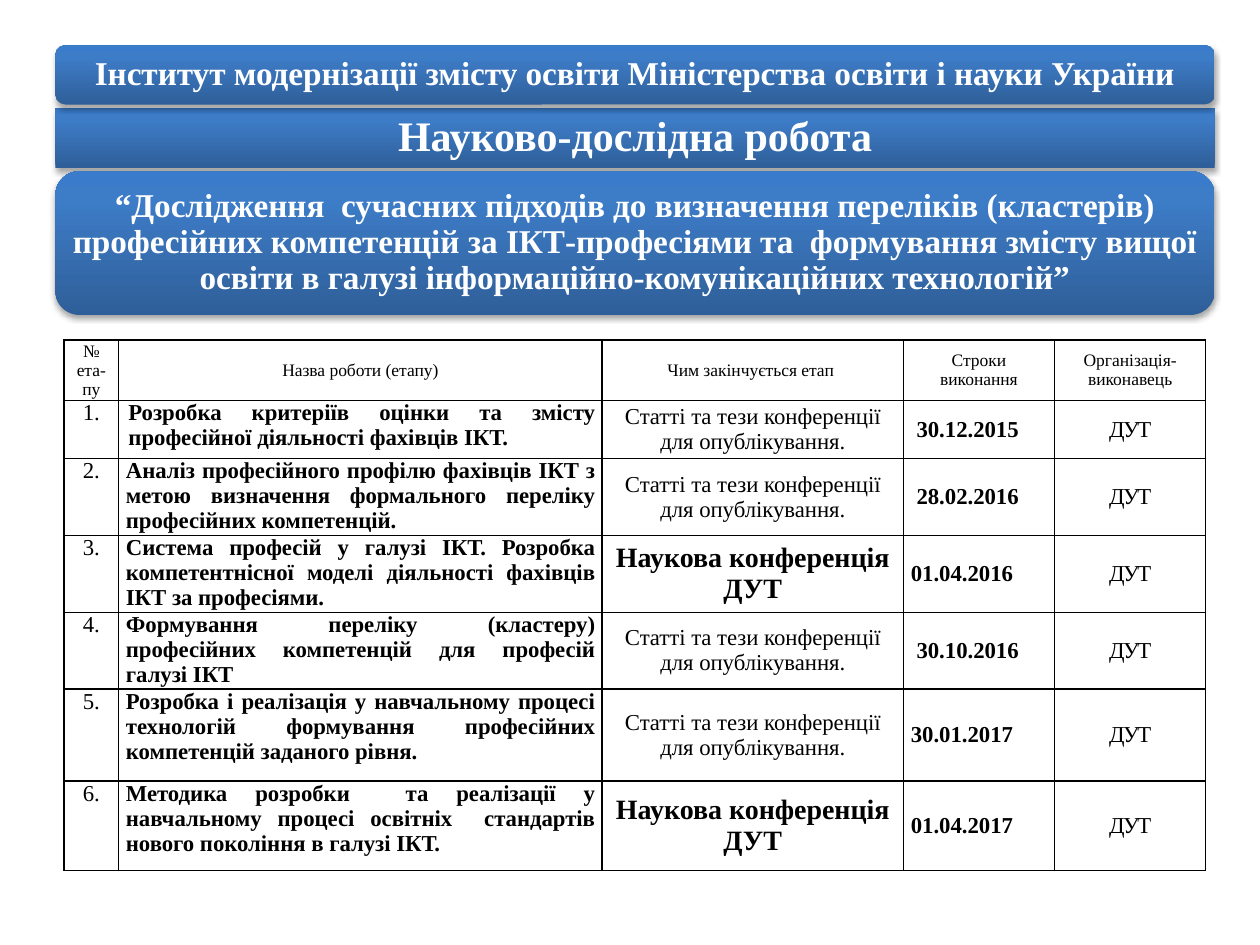
from lxml import etree
from pptx import Presentation
from pptx.dml.color import RGBColor
from pptx.enum.shapes import MSO_SHAPE
from pptx.enum.text import MSO_ANCHOR, MSO_AUTO_SIZE, PP_ALIGN
from pptx.util import Inches, Pt

ROUND = MSO_SHAPE.ROUNDED_RECTANGLE
MIDDLE, TOP = MSO_ANCHOR.MIDDLE, MSO_ANCHOR.TOP
LEFT, CENTER, JUSTIFY = PP_ALIGN.LEFT, PP_ALIGN.CENTER, PP_ALIGN.JUSTIFY
NS = "http://schemas.openxmlformats.org/drawingml/2006/main"
FONT = "Times New Roman"

BANNERS = [
    ("Інститут модернізації змісту освіти Міністерства освіти і науки України", 19, 0.47),
    ("Науково-дослідна робота", 24, 0.47),
    ("“Дослідження  сучасних підходів до визначення переліків (кластерів) "
     "професійних компетенцій за ІКТ-професіями та  формування змісту вищої "
     "освіти в галузі інформаційно-комунікаційних технологій”", 19, 1.14),
]
HEADERS = ["№\nета-пу", "Назва роботи (етапу)", "Чим закінчується етап ",
           "Строки виконання", "Організація-виконавець"]
ARTICLES = "Статті та тези конференції для опублікування."
CONFERENCE = "Наукова конференція ДУТ"
STAGES = [
    ("Розробка критеріїв оцінки та змісту професійної діяльності фахівців ІКТ. ",
     ARTICLES, " 30.12.2015"),
    ("Аналіз професійного профілю фахівців ІКТ з метою визначення формального "
     "переліку професійних компетенцій.", ARTICLES, " 28.02.2016"),
    ("Система професій у галузі ІКТ. Розробка компетентнісної моделі діяльності "
     "фахівців ІКТ за професіями.", CONFERENCE, "01.04.2016"),
    ("Формування переліку (кластеру) професійних компетенцій для професій галузі ІКТ",
     ARTICLES, " 30.10.2016"),
    ("Розробка і реалізація у навчальному процесі технологій формування "
     "професійних компетенцій заданого рівня. ", ARTICLES, "30.01.2017"),
    ("Методика розробки  та реалізації у навчальному процесі освітніх  стандартів "
     "нового покоління в галузі ІКТ.", CONFERENCE, "01.04.2017"),
]
COLS = [0.43, 3.84, 2.39, 1.2, 1.2]
ROWS = [0.48, 0.46, 0.61, 0.61, 0.61, 0.73, 0.71]

BANNER_STYLE = [
    '<a:prstGeom {ns} prst="roundRect"><a:avLst/></a:prstGeom>',
    '<a:gradFill {ns} rotWithShape="1"><a:gsLst>'
    '<a:gs pos="0"><a:srgbClr val="2F5F99"/></a:gs>'
    '<a:gs pos="80000"><a:srgbClr val="3D7CC7"/></a:gs>'
    '<a:gs pos="100000"><a:srgbClr val="3A7CCB"/></a:gs>'
    '</a:gsLst><a:lin ang="16200000" scaled="0"/></a:gradFill>',
    '<a:ln {ns}><a:noFill/></a:ln>',
    '<a:effectLst {ns}><a:outerShdw blurRad="39370" dist="22860" dir="5400000" rotWithShape="0">'
    '<a:srgbClr val="000000"><a:alpha val="35000"/></a:srgbClr></a:outerShdw></a:effectLst>',
]
BORDER = ('<a:{side} {ns} w="12700"><a:solidFill><a:srgbClr val="000000"/>'
          '</a:solidFill></a:{side}>')


def color(value):
    """Turn a hex string into a colour."""
    return RGBColor.from_string(value)


def element(markup, **names):
    """Parse a DrawingML fragment."""
    return etree.fromstring(markup.format(ns=f'xmlns:a="{NS}"', **names))


def write(tf, text, size, fill, align, bold=False, spacing=1.0):
    """Fill a text frame with one paragraph per line of text."""
    tf.text = text
    tf.word_wrap = True
    for p in tf.paragraphs:
        p.alignment, p.line_spacing = align, spacing
        for r in p.runs:
            for key, value in {"name": FONT, "size": Pt(size), "bold": bold}.items():
                setattr(r.font, key, value)
            r.font.color.rgb = color(fill)


def banner(sp, box, text, size):
    """Place and style one gradient banner."""
    for key, value in zip(("left", "top", "width", "height"), box):
        setattr(sp, key, Inches(value))
    spPr = sp.element.spPr
    for child in list(spPr)[1:]:
        spPr.remove(child)
    for markup in BANNER_STYLE:
        spPr.append(element(markup))
    tf = sp.text_frame
    tf.auto_size, tf.vertical_anchor = MSO_AUTO_SIZE.NONE, MIDDLE
    for side in ("left", "top", "right", "bottom"):
        setattr(tf, f"margin_{side}", Inches(0.04))
    write(tf, text, size, "FFFFFF", CENTER, True, 0.9)


def banners(s, left, top, width, gap):
    """Stack the heading banners, the second being the slide title."""
    for i, (text, size, height) in enumerate(BANNERS):
        box = (left, top, width, height)
        sp = s.shapes.title if i == 1 else s.shapes.add_shape(ROUND, *map(Inches, box))
        banner(sp, box, text, size)
        top += height + gap


def table_cell(cell, text, size=13, align=CENTER, bold=False, anchor=MIDDLE):
    """Write one bordered, unfilled table cell."""
    write(cell.text_frame, text, size, "000000", align, bold)
    margins = {"margin_left": 0.06, "margin_right": 0.06, "margin_top": 0, "margin_bottom": 0}
    for key, value in margins.items():
        setattr(cell, key, Inches(value))
    cell.vertical_anchor = anchor
    tcPr = cell._tc.get_or_add_tcPr()
    for side in ("lnL", "lnR", "lnT", "lnB"):
        tcPr.append(element(BORDER, side=side))
    cell.fill.background()


def stage_table(s, left, top):
    """Build the table of work stages."""
    table = s.shapes.add_table(len(ROWS), len(COLS), Inches(left), Inches(top),
                               Inches(sum(COLS)), Inches(sum(ROWS))).table
    table.first_row = table.horz_banding = False
    for col, width in zip(table.columns, COLS):
        col.width = Inches(width)
    for row, height in zip(table.rows, ROWS):
        row.height = Inches(height)
    for i, text in enumerate(HEADERS):
        table_cell(table.cell(0, i), text, 10)
    for n, (name, result, date) in enumerate(STAGES, 1):
        final = result == CONFERENCE
        formats = [
            (f"{n}.", 13, CENTER, False, TOP),
            (name, 13, JUSTIFY, True, TOP),
            (result, 16 if final else 13, CENTER, final),
            (date, 13, LEFT, True),
            ("ДУТ",),
        ]
        for i, values in enumerate(formats):
            table_cell(table.cell(n, i), *values)
        r = table.cell(n, 4).text_frame.paragraphs[0].runs[0]
        r.font._element.set("spc", "-100")
    p = table.cell(1, 1).text_frame.paragraphs[0]
    p._p.get_or_add_pPr().set("marL", str(Inches(0.02)))


def main():
    """Build and save the slide."""
    prs = Presentation()
    prs.slide_width, prs.slide_height = Inches(10), Inches(7.5)
    s = prs.slides.add_slide(prs.slide_layouts[5])
    banners(s, 0.44, 0.36, 9.2, 0.03)
    stage_table(s, 0.51, 2.7)
    prs.save("out.pptx")


if __name__ == "__main__":
    main()
